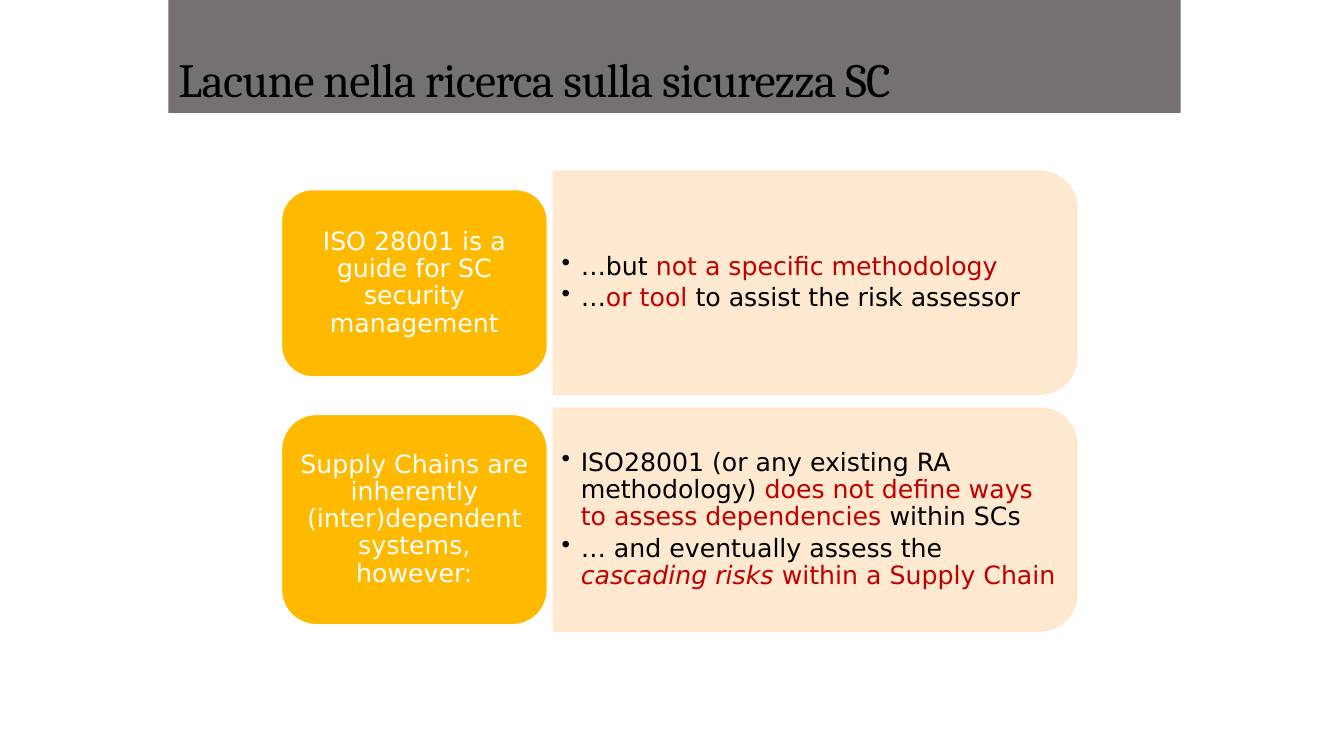
from lxml.etree import SubElement
from pptx import Presentation
from pptx.dml.color import RGBColor
from pptx.enum.shapes import MSO_SHAPE
from pptx.enum.text import MSO_ANCHOR, MSO_AUTO_SIZE, PP_ALIGN
from pptx.oxml.ns import qn
from pptx.util import Inches, Pt

GRAY = RGBColor(0x76, 0x71, 0x71)
GOLD = RGBColor(0xFF, 0xBA, 0x00)
CREAM = RGBColor(0xFF, 0xE7, 0xCC)
RED = RGBColor(0xC0, 0x00, 0x00)
BLACK = RGBColor(0, 0, 0)
WHITE = RGBColor(255, 255, 255)

# Each row: top and height of its label, label text, points made of (text, colour, italic)
ROWS = [
    (1.88, 1.86, "ISO 28001 is a guide for SC security management", [
        [("…but ", BLACK, False), ("not a specific methodology", RED, False)],
        [("…", BLACK, False), ("or tool ", RED, False),
         ("to assist the risk assessor", BLACK, False)],
    ]),
    (4.11, 2.09, "Supply Chains are inherently (inter)dependent systems, however:", [
        [("ISO28001 (or any existing RA methodology) ", BLACK, False),
         ("does not define ways to assess dependencies ", RED, False),
         ("within SCs", BLACK, False)],
        [("… and eventually assess the ", BLACK, False),
         ("cascading risks ", RED, True), ("within a Supply Chain", RED, False)],
    ]),
]


def add_title(slide, left, top, width, height):
    title = slide.shapes.title
    title.left, title.top = Inches(left), Inches(top)
    title.width, title.height = Inches(width), Inches(height)
    title.fill.solid()
    title.fill.fore_color.rgb = GRAY
    frame = title.text_frame
    frame.text = "Lacune nella ricerca sulla sicurezza SC"
    frame.auto_size = MSO_AUTO_SIZE.NONE
    frame.vertical_anchor = MSO_ANCHOR.BOTTOM
    para = frame.paragraphs[0]
    para.alignment = PP_ALIGN.LEFT
    para.line_spacing = 0.9
    style(para.font, 34, "Cambria", BLACK)
    para.runs[0].font._element.set("spc", "-50")


def style(font, size, name, color):
    font.size, font.name = Pt(size), name
    font.color.rgb = color


def paint(shape, fill, line):
    shape.shadow.inherit = False
    shape.fill.solid()
    shape.fill.fore_color.rgb = fill
    shape.line.color.rgb = line
    shape.line.width = Pt(1.25)


def fade(shape, percent):
    for color in shape._element.spPr.iter(qn("a:srgbClr")):
        SubElement(color, qn("a:alpha"), val=str(percent * 1000))


def set_frame(frame):
    frame.word_wrap = True
    frame.vertical_anchor = MSO_ANCHOR.MIDDLE
    frame.margin_left = frame.margin_right = Inches(0.07)
    frame.margin_top = frame.margin_bottom = Inches(0.04)


def add_bullet(para):
    props = para._p.get_or_add_pPr()
    props.set("marL", str(Inches(0.19)))
    props.set("indent", str(-Inches(0.19)))
    SubElement(props, qn("a:buChar"), char="•")


def add_label(slide, left, top, width, height, text):
    label = slide.shapes.add_shape(MSO_SHAPE.ROUNDED_RECTANGLE, Inches(left),
                                   Inches(top), Inches(width), Inches(height))
    paint(label, GOLD, WHITE)
    frame = label.text_frame
    set_frame(frame)
    frame.text = text
    para = frame.paragraphs[0]
    para.alignment = PP_ALIGN.CENTER
    para.line_spacing = 0.9
    style(para.font, 18, "DejaVu Sans", WHITE)


def add_panel(slide, left, top, width, height, points):
    # The panel is a tall shape turned by 90 degrees about its centre
    shift = (width - height) / 2
    panel = slide.shapes.add_shape(
        MSO_SHAPE.ROUND_2_SAME_RECTANGLE, Inches(left + shift),
        Inches(top - shift), Inches(height), Inches(width))
    panel.rotation = 90
    paint(panel, CREAM, CREAM)
    fade(panel, 90)

    # Upright bullet list over the panel
    box = slide.shapes.add_textbox(Inches(left + 0.01), Inches(top + 0.11),
                                   Inches(width - 0.11), Inches(height - 0.22))
    frame = box.text_frame
    set_frame(frame)
    for i, point in enumerate(points):
        para = frame.add_paragraph() if i else frame.paragraphs[0]
        para.line_spacing = 0.9
        para.space_after = Pt(3)
        add_bullet(para)
        para.font.size, para.font.name = Pt(18), "DejaVu Sans"
        for text, color, slant in point:
            run = para.add_run()
            run.text = text
            run.font.color.rgb = color
            run.font.italic = slant


def main():
    deck = Presentation()
    deck.slide_width, deck.slide_height = Inches(13.33), Inches(7.5)
    slide = deck.slides.add_slide(deck.slide_layouts[5])
    add_title(slide, 1.67, -0.03, 10.04, 1.15)
    for i, (top, height, text, points) in enumerate(ROWS):
        add_panel(slide, 5.49, 1.7 + 2.35 * i, 5.19, 2.21, points)
        add_label(slide, 2.79, top, 2.64, height, text)
    deck.save("out.pptx")


if __name__ == "__main__":
    main()
